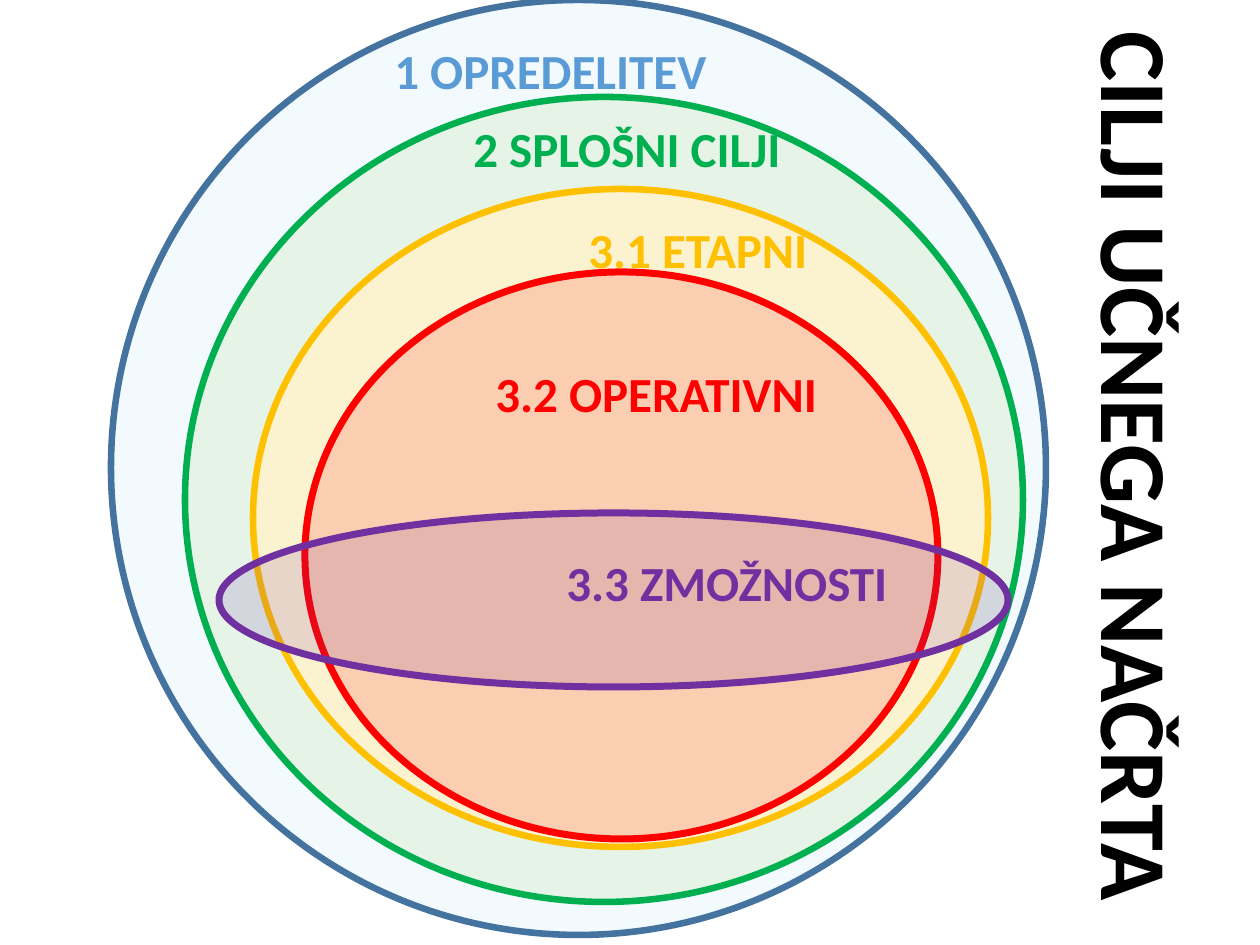
"""Build a slide of nested ellipses showing the goals of a curriculum."""
from lxml import etree
from pptx import Presentation
from pptx.dml.color import RGBColor
from pptx.enum.shapes import MSO_SHAPE
from pptx.enum.text import MSO_AUTO_SIZE
from pptx.oxml.ns import qn
from pptx.util import Pt

PX = 914400 / 126
ELLIPSE = MSO_SHAPE.OVAL
GROW = MSO_AUTO_SIZE.SHAPE_TO_FIT_TEXT
FONT = "Calibri"
LABEL_HEIGHT = 72

# left, top, width, height, fill, opacity in percent, line, line width
ELLIPSES = [
    (111, 0, 935, 935, "00B0F0", 5, "43739E", 3.75),
    (185, 97, 838, 805, "92D050", 13, "00B050", 3.75),
    (253, 189, 735, 658, "FFF2CC", 85, "FFC000", 3.75),
    (305, 272, 633, 567, "FF0000", 15, "FF0000", 4),
    (219, 513, 789, 174, "7030A0", 15, "7030A0", 4),
]
LABELS = [
    ("1 OPREDELITEV", 382, 34, 340, "5B9BD5"),
    ("2 SPLOŠNI CILJI", 461, 112, 336, "00B050"),
    ("3.1 ETAPNI", 576, 213, 247, "FFC000"),
    ("3.2 OPERATIVNI", 483, 357, 352, "FF0000"),
    ("3.3 ZMOŽNOSTI", 554, 546, 350, "7030A0"),
]
TITLE = ("CILJI UČNEGA NAČRTA", 687, 407, 903, "000000")
TITLE_HEIGHT = 127


def px(*lengths):
    return [round(length * PX) for length in lengths]


def color(value):
    return RGBColor.from_string(value)


def add_ellipse(slide, left, top, width, height, fill, opacity, line, line_width):
    shape = slide.shapes.add_shape(ELLIPSE, *px(left, top, width, height))
    shape.shadow.inherit = False
    shape.fill.solid()
    shape.fill.fore_color.rgb = color(fill)
    fill_color = shape.element.spPr.find(qn("a:solidFill"))[0]
    etree.SubElement(fill_color, qn("a:alpha"), val=str(opacity * 1000))
    shape.line.color.rgb = color(line)
    shape.line.width = Pt(line_width)


def add_label(slide, text, left, top, width, text_color, height=LABEL_HEIGHT, size=28):
    shape = slide.shapes.add_textbox(*px(left, top, width, height))
    frame = shape.text_frame
    frame.word_wrap = False
    frame.auto_size = GROW
    paragraph = frame.paragraphs[0]
    paragraph.text = text
    font = paragraph.font
    font.name = FONT
    font.size = Pt(size)
    font.bold = True
    font.color.rgb = color(text_color)
    return shape


def main():
    presentation = Presentation()
    presentation.slide_width, presentation.slide_height = px(1260, 945)
    slide = presentation.slides.add_slide(presentation.slide_layouts[6])
    for ellipse in ELLIPSES:
        add_ellipse(slide, *ellipse)
    for label in LABELS:
        add_label(slide, *label)
    title = add_label(slide, *TITLE, height=TITLE_HEIGHT, size=54)
    title.rotation = 90
    title.fill.solid()
    title.fill.fore_color.rgb = color("FFFFFF")
    presentation.save("out.pptx")


if __name__ == "__main__":
    main()
